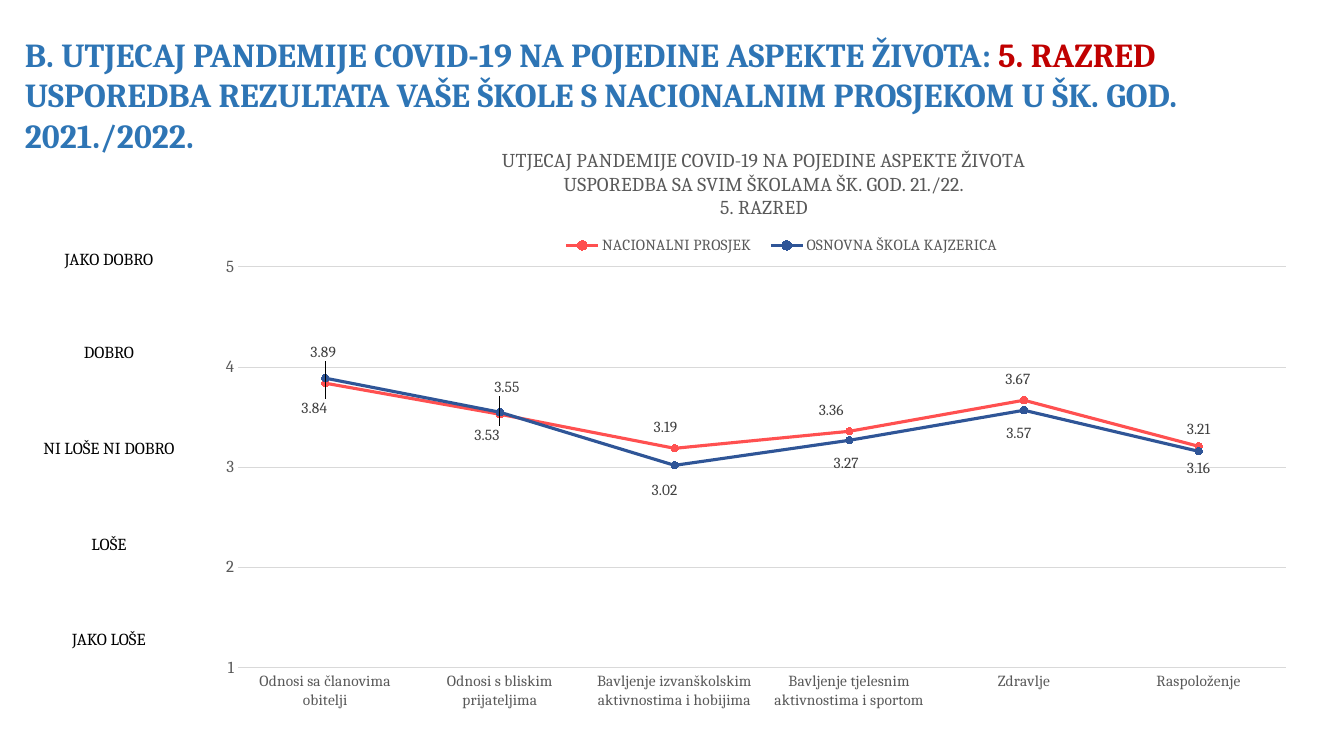
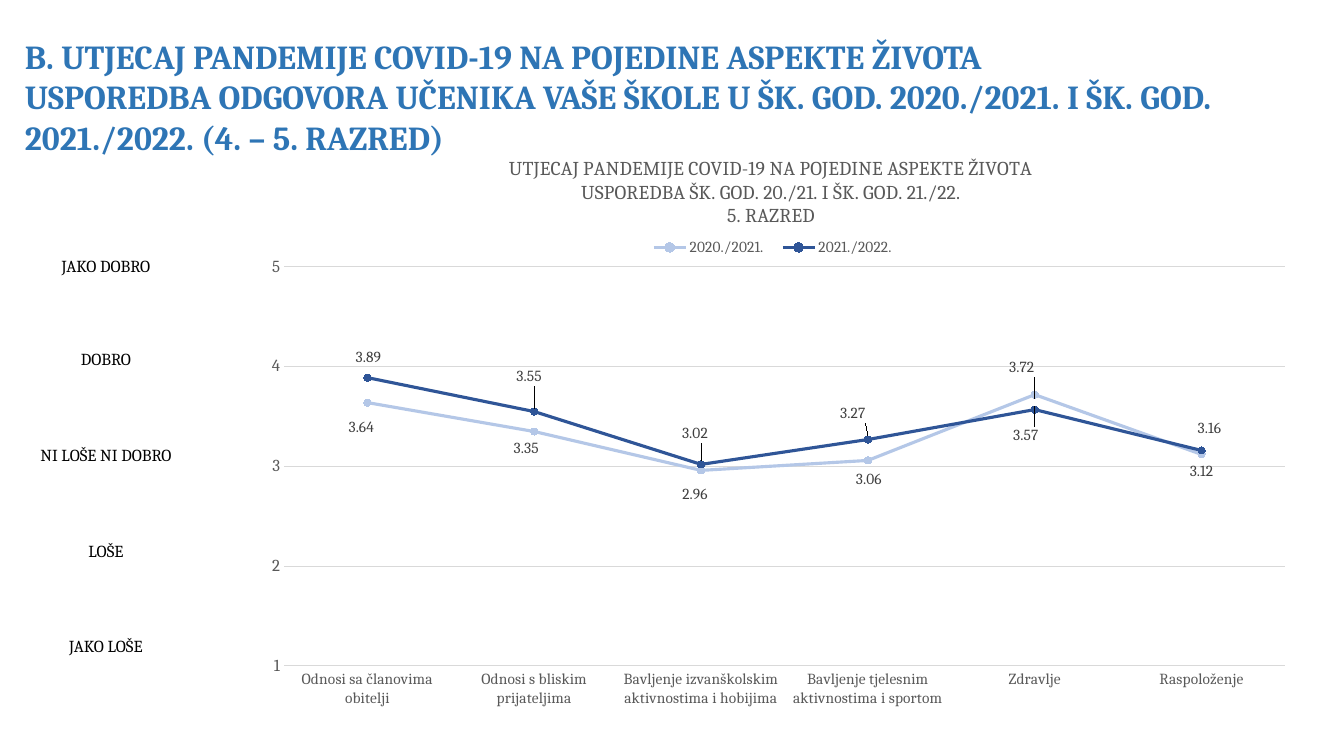
from pptx import Presentation
from pptx.chart.data import CategoryChartData
from pptx.dml.color import RGBColor
from pptx.enum.chart import (XL_CHART_TYPE, XL_LEGEND_POSITION as LEGEND,
                             XL_LABEL_POSITION as LABEL, XL_MARKER_STYLE, XL_TICK_MARK)
from pptx.enum.text import PP_ALIGN
from pptx.oxml import parse_xml
from pptx.oxml.ns import nsdecls, qn
from pptx.util import Pt

PX = 914400 / 100.8
FONT = "Cambria"
BLUE = RGBColor(0x2E, 0x75, 0xB5)
RED = RGBColor(0xC0, 0x00, 0x00)
BLACK = RGBColor(0x00, 0x00, 0x00)
GREY = RGBColor(0x59, 0x59, 0x59)
DARK_GREY = RGBColor(0x40, 0x40, 0x40)
GRID = RGBColor(0xD9, 0xD9, 0xD9)
CORAL = RGBColor(0xFF, 0x50, 0x50)
NAVY = RGBColor(0x2F, 0x55, 0x97)
PALE_BLUE = RGBColor(0xB4, 0xC7, 0xE7)

SCALE = ["JAKO DOBRO", "DOBRO", "NI LOŠE NI DOBRO", "LOŠE", "JAKO LOŠE"]
SCALE_GAPS = [0, 52, 54, 54, 54]
ASPECTS = ["Odnosi sa članovima obitelji", "Odnosi s bliskim prijateljima",
           "Bavljenje izvanškolskim aktivnostima i hobijima",
           "Bavljenje tjelesnim aktivnostima i sportom", "Zdravlje", "Raspoloženje"]
CHART_HEADING = "UTJECAJ PANDEMIJE COVID-19 NA POJEDINE ASPEKTE ŽIVOTA"
SCHOOL_SCORES = [3.89, 3.55, 3.02, 3.27, 3.57, 3.16]

SLIDES = [
    dict(
        title=[[("B. UTJECAJ PANDEMIJE COVID-19 NA POJEDINE ASPEKTE ŽIVOTA: ", BLUE),
                ("5. RAZRED ", RED),
                ("USPOREDBA REZULTATA VAŠE ŠKOLE S NACIONALNIM PROSJEKOM U ŠK. GOD. 2021./2022.", BLUE)]],
        title_box=(15, 29, 1329, 132),
        scale_box=(33, 244, 152, 434),
        frame=(194, 130, 1118, 626),
        plot=(238, 267, 1048, 401),
        heading=[CHART_HEADING, "USPOREDBA SA SVIM ŠKOLAMA ŠK. GOD. 21./22.", "5. RAZRED"],
        heading_at=(499, 145),
        legend=(552, 235, 460, 21),
        series=[
            dict(name="NACIONALNI PROSJEK", scores=[3.84, 3.53, 3.19, 3.36, 3.67, 3.21],
                 color=CORAL, side=LABEL.ABOVE,
                 shifts=[(-11, 42), (-13, 38), (-9, -4), (-18, -4), (-6, -4)]),
            dict(name="OSNOVNA ŠKOLA KAJZERICA", scores=SCHOOL_SCORES,
                 color=NAVY, side=LABEL.BELOW,
                 shifts=[(-2, -43), (7, -42), (-10, 8), (-3, 6), (-5, 6)]),
        ],
    ),
    dict(
        title=[[("B. UTJECAJ PANDEMIJE COVID-19 NA POJEDINE ASPEKTE ŽIVOTA", BLUE)],
               [("USPOREDBA ODGOVORA UČENIKA VAŠE ŠKOLE U ŠK. GOD. 2020./2021. "
                 "I ŠK. GOD. 2021./2022. (4. – 5. RAZRED)", BLUE)]],
        title_box=(15, 31, 1329, 132),
        scale_box=(30, 251, 152, 434),
        frame=(218, 140, 1121, 622),
        plot=(284, 267, 1001, 399),
        heading=[CHART_HEADING, "USPOREDBA ŠK. GOD. 20./21. I ŠK. GOD. 21./22.", "5. RAZRED"],
        heading_at=(506, 153),
        legend=(640, 237, 266, 21),
        series=[
            dict(name="2020./2021.", scores=[3.64, 3.35, 2.96, 3.06, 3.72, 3.12],
                 color=PALE_BLUE, side=LABEL.BELOW,
                 shifts=[(-6, 8), (-8, 0), (-6, 7), (1, 2), (-13, -44)]),
            dict(name="2021./2022.", scores=SCHOOL_SCORES,
                 color=NAVY, side=LABEL.ABOVE,
                 shifts=[(1, -4), (-5, -18), (-6, -14), (-15, -9), (-9, 43), (8, -5)]),
        ],
    ),
]


def emu(lengths):
    return [round(length * PX) for length in lengths]


def style(font, size, color, bold=False):
    font.name, font.size, font.bold = FONT, Pt(size), bold
    font.color.rgb = color


def write(frame, paragraphs, size, bold=False, align=PP_ALIGN.LEFT, gaps=None):
    for i, runs in enumerate(paragraphs):
        paragraph = frame.paragraphs[0] if i == 0 else frame.add_paragraph()
        paragraph.alignment = align
        if gaps:
            paragraph.space_before = Pt(gaps[i])
        for text, color in runs:
            run = paragraph.add_run()
            run.text = text
            style(run.font, size, color, bold)


def add_text(slide, box, paragraphs, **formatting):
    frame = slide.shapes.add_textbox(*emu(box)).text_frame
    frame.word_wrap = True
    write(frame, paragraphs, **formatting)


def place(parent, index, frame, box, edge=True, inner=False):
    for old in parent.findall(qn("c:layout")):
        parent.remove(old)
    left, top, width, height = frame
    origin = (left, top) if edge else (0, 0)
    parts = ['<c:layoutTarget val="inner"/>'] if inner else []
    if edge:
        parts += ['<c:xMode val="edge"/>', '<c:yMode val="edge"/>']
    fractions = [(box[0] - origin[0]) / width, (box[1] - origin[1]) / height]
    if len(box) == 4:
        fractions += [box[2] / width, box[3] / height]
    parts += [f'<c:{key} val="{value:.4f}"/>' for key, value in zip("xywh", fractions)]
    parent.insert(index, parse_xml(
        f'<c:layout {nsdecls("c")}><c:manualLayout>{"".join(parts)}</c:manualLayout></c:layout>'))


def style_axes(chart):
    aspects, scores = chart.category_axis, chart.value_axis
    for axis, size in ((aspects, 11), (scores, 12)):
        axis.major_tick_mark = axis.minor_tick_mark = XL_TICK_MARK.NONE
        style(axis.tick_labels.font, size, GREY)
    scores.minimum_scale, scores.maximum_scale, scores.major_unit = 1, 5, 1
    scores.tick_labels.number_format = "0"
    scores.tick_labels.number_format_is_linked = False
    scores.format.line.fill.background()
    scores.has_major_gridlines = True
    for line in (aspects.format.line, scores.major_gridlines.format.line):
        line.color.rgb, line.width = GRID, Pt(0.75)


def style_series(series, content, frame):
    color = content["color"]
    series.smooth = False
    series.format.line.color.rgb, series.format.line.width = color, Pt(2.25)
    marker = series.marker
    marker.style, marker.size = XL_MARKER_STYLE.CIRCLE, 5
    marker.format.fill.solid()
    marker.format.fill.fore_color.rgb = color
    marker.format.line.color.rgb = color
    labels = series.data_labels
    labels.show_value = True
    labels.position = content["side"]
    style(labels.font, 11, DARK_GREY)
    for i in range(len(content["shifts"])):
        label = series.points[i].data_label
        label.position = content["side"]
        style(label.font, 11, DARK_GREY)
    for element, shift in zip(labels._element.findall(qn("c:dLbl")), content["shifts"]):
        place(element, 1, frame, shift, edge=False)


def add_comparison(slide, content):
    frame = content["frame"]
    data = CategoryChartData()
    data.categories = ASPECTS
    for item in content["series"]:
        data.add_series(item["name"], item["scores"])
    chart = slide.shapes.add_chart(XL_CHART_TYPE.LINE_MARKERS, *emu(frame), data).chart
    style(chart.font, 10, BLACK)
    chart.plots[0].vary_by_categories = False
    style_axes(chart)
    for series, item in zip(chart.plots[0].series, content["series"]):
        style_series(series, item, frame)

    chart.has_title = True
    write(chart.chart_title.text_frame, [[(line, GREY)] for line in content["heading"]],
          size=14, align=PP_ALIGN.CENTER)
    chart.has_legend = True
    chart.legend.position = LEGEND.TOP
    chart.legend.include_in_layout = False
    style(chart.legend.font, 11, GREY)

    root = chart.element.find(qn("c:chart"))
    place(root.find(qn("c:title")), 1, frame, content["heading_at"])
    place(root.find(qn("c:legend")), 1, frame, content["legend"])
    place(root.find(qn("c:plotArea")), 0, frame, content["plot"], inner=True)


def main():
    deck = Presentation()
    deck.slide_width, deck.slide_height = emu((1344, 756))
    for content in SLIDES:
        slide = deck.slides.add_slide(deck.slide_layouts[6])
        add_text(slide, content["title_box"], content["title"], size=24, bold=True)
        add_text(slide, content["scale_box"], [[(grade, BLACK)] for grade in SCALE],
                 size=12, align=PP_ALIGN.CENTER, gaps=SCALE_GAPS)
        add_comparison(slide, content)
    deck.save("out.pptx")


if __name__ == "__main__":
    main()
